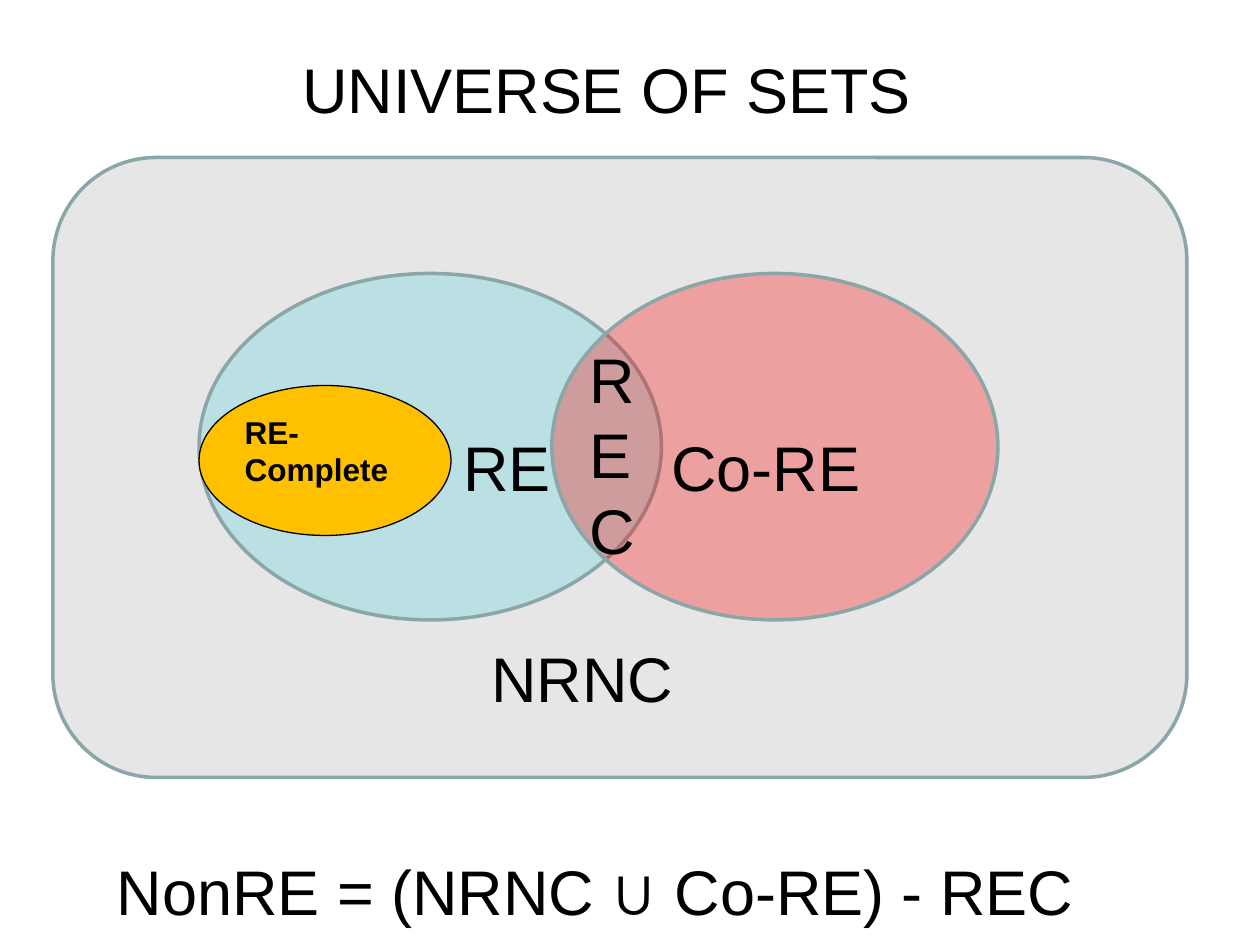
from lxml.etree import SubElement
from pptx import Presentation
from pptx.dml.color import RGBColor
from pptx.enum.shapes import MSO_SHAPE as Shape
from pptx.enum.text import MSO_ANCHOR as Anchor, PP_ALIGN as Align
from pptx.oxml.ns import qn
from pptx.util import Inches, Pt

FONT = "Arial"
BLACK = "000000"
OUTLINE = "8AA6A8"


def color(hex_code):
    return RGBColor.from_string(hex_code)


def write(shape, text, size=36, bold=False, align=Align.LEFT):
    frame = shape.text_frame
    frame.word_wrap = True
    frame.vertical_anchor = Anchor.TOP
    frame.text = text
    para = frame.paragraphs[0]
    para.alignment = align
    font = para.runs[0].font
    font.name, font.size, font.bold = FONT, Pt(size), bold
    font.color.rgb = color(BLACK)


def add_label(page, left, top, width, text, height=0.71, align=Align.LEFT):
    box = page.shapes.add_textbox(*map(Inches, (left, top, width, height)))
    write(box, text, align=align)


def add_region(page, kind, bounds, fill, line=OUTLINE, line_width=2, opacity=100):
    """Draw one set as a filled outline; opacity is in percent."""
    region = page.shapes.add_shape(kind, *map(Inches, bounds))
    region.shadow.inherit = False
    region.fill.solid()
    region.fill.fore_color.rgb = color(fill)
    if opacity < 100:
        fill_color = region.fill._xPr.find(qn("a:solidFill"))[0]
        SubElement(fill_color, qn("a:alpha"), val=str(opacity * 1000))
    region.line.color.rgb = color(line)
    region.line.width = Pt(line_width)
    return region


def add_complete_set(page, left, top, width, height):
    complete = add_region(page, Shape.OVAL, (left, top, width, height),
                          "FFC000", BLACK, 0.75)
    write(complete, "RE-Complete", size=18, bold=True)
    frame = complete.text_frame
    frame.margin_left = frame.margin_right = Inches(0.07)
    frame.margin_top = frame.margin_bottom = Inches(0.04)


def add_universe(page, left, top, width, height):
    """Draw the universe with the overlapping RE and Co-RE sets inside it."""
    add_region(page, Shape.ROUNDED_RECTANGLE, (left, top, width, height), "E6E6E6")
    set_left, set_top, set_height = left + 1.16, top + 0.92, 2.75
    add_region(page, Shape.OVAL, (set_left, set_top, 3.67, set_height), "BBE0E3")
    add_region(page, Shape.OVAL, (set_left + 2.8, set_top, 3.54, set_height),
               "FF0000", opacity=30)

    label_top = top + 2.1
    add_label(page, left + 3.16, label_top, 0.96, "RE")
    add_label(page, left + 4.81, label_top, 1.9, "Co-RE")
    # The narrow box stacks the letters one per line.
    add_label(page, left + 4.16, top + 1.4, 0.29, "REC", height=1.92)
    add_label(page, left + 3.38, top + 3.78, 2.15, "NRNC")
    add_complete_set(page, set_left, top + 1.81, 2, 1.19)


def main():
    deck = Presentation()
    deck.slide_width, deck.slide_height = Inches(10), Inches(7.5)
    page = deck.slides.add_slide(deck.slide_layouts[6])
    add_label(page, 2.3, 0.35, 5.15, "UNIVERSE OF SETS")
    add_universe(page, 0.42, 1.25, 9, 4.92)
    add_label(page, 0.56, 6.72, 8.33, "NonRE = (NRNC ∪ Co-RE) - REC",
              align=Align.CENTER)
    deck.save("out.pptx")


if __name__ == "__main__":
    main()
